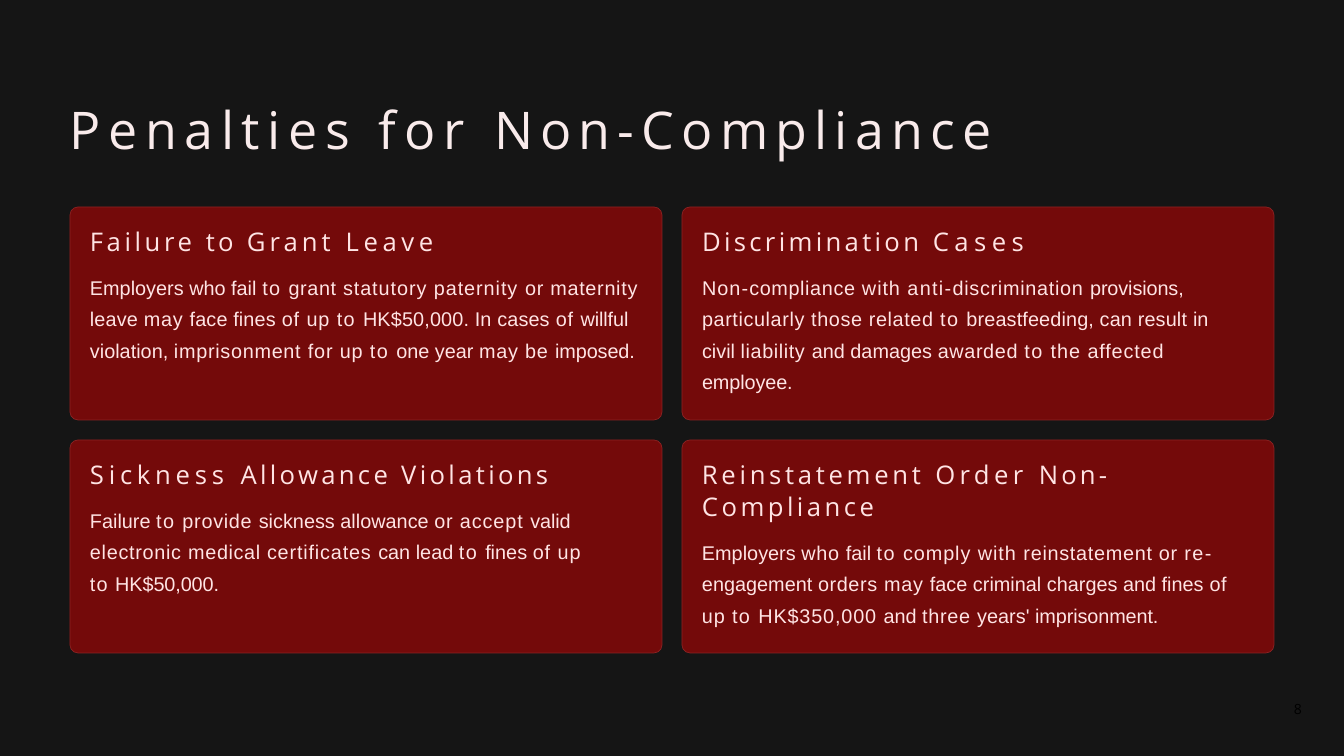
"""Build the slide on penalties for non-compliance: a title above four cards."""
from pptx import Presentation
from pptx.dml.color import RGBColor
from pptx.enum.shapes import MSO_SHAPE
from pptx.enum.text import PP_ALIGN
from pptx.util import Pt

TITLE = [("Penalties ", 6.5), ("for ", 6.8), ("Non-", 6), ("Compliance", 6.2)]
PAGE_NUMBER = [("8", 0)]

CARDS = [
    {
        "text_size": (552, 139),
        "headings": [[("Failure ", 3.1), ("to ", 2.8), ("Grant ", 3.5), ("Leave", 4)]],
        "body": [
            ("Employers who fail ", 0), ("to ", 1.2), ("grant ", 0.5),
            ("statutory paternity ", 0.8), ("or maternity ", 0.6), ("leave ", 0.1),
            ("may ", 0.6), ("face fines ", 0.1), ("of ", 0.8), ("up ", 0.7), ("to ", 1.2),
            ("HK$50,000. In cases ", 0.1), ("of ", 0.8), ("willful ", -0.1),
            ("violation, ", 0), ("imprisonment ", 0.6), ("for up ", 0.7), ("to ", 1.2),
            ("one year ", 0), ("may ", 0.6), ("be ", 0.7), ("imposed.", -0.1),
        ],
    },
    {
        "text_size": (511, 171),
        "headings": [[("Discrimination ", 2.9), ("Cases", 4.7)]],
        "body": [
            ("Non-", 0.9), ("compliance ", 0.5), ("with ", 0.8), ("anti-", 1.1),
            ("discrimination ", 0.6), ("provisions, ", -0.1),
            ("particularly those related ", 0.5), ("to ", 1.2),
            ("breastfeeding, can result ", 0.1), ("in ", -0.2), ("civil ", 0),
            ("liability ", 0.5), ("and damages ", 0), ("awarded ", 0.5), ("to ", 1.2),
            ("the ", 0.8), ("affected ", 0.7), ("employee.", -0.1),
        ],
    },
    {
        "text_size": (516, 139),
        "headings": [[("Sickness ", 4.1), ("Allowance Violations", 2.9)]],
        "body": [
            ("Failure ", 0), ("to ", 1.2), ("provide ", 0.6), ("sickness allowance ", 0),
            ("or ", 0.6), ("accept ", 0.8), ("valid ", -0.1), ("electronic ", 0.6),
            ("medical ", 0.5), ("certificates ", 0.7), ("can lead ", 0), ("to ", 1.2),
            ("fines ", 0), ("of ", 0.8), ("up ", 0.7), ("to ", 0.9), ("HK$50,000.", -0.1),
        ],
    },
    {
        "text_size": (540, 174),
        "headings": [
            [("Reinstatement ", 3.2), ("Order ", 3.8), ("Non-", 2.7)],
            [("Compliance", 3)],
        ],
        "body": [
            ("Employers ", 0), ("who ", 0.5), ("fail ", 0), ("to ", 1.2),
            ("comply with ", 0.8), ("reinstatement or ", 0.6), ("re- ", 1.2),
            ("engagement ", 0), ("orders ", 0.5), ("may ", 0.6),
            ("face criminal charges and fines ", 0), ("of ", 0.5), ("up ", 0.7),
            ("to ", 1.2), ("HK$350,000 ", 0.7), ("and ", 0), ("three ", 0.6),
            ("years' ", 0), ("imprisonment.", -0.1),
        ],
    },
]

BACKGROUND = RGBColor(0x15, 0x15, 0x15)
CARD_FILL = RGBColor(0x74, 0x0A, 0x0A)
CARD_LINE = RGBColor(0x8D, 0x23, 0x23)
TITLE_COLOR = RGBColor(0xF9, 0xEB, 0xEB)
TEXT_COLOR = RGBColor(0xFF, 0xE4, 0xE4)
NUMBER_COLOR = RGBColor(0x00, 0x00, 0x00)

TITLE_FONT = {"name": "Open Sans", "size": Pt(44.5), "color": TITLE_COLOR}
HEADING_FONT = {"name": "Open Sans", "size": Pt(22), "color": TEXT_COLOR}
BODY_FONT = {"name": "Arial", "size": Pt(17), "color": TEXT_COLOR}
NUMBER_FONT = {"name": "Open Sans", "size": Pt(12), "color": NUMBER_COLOR}

PX = 914400 // 84
CARD_LEFT, CARD_TOP = 70, 207
CARD_WIDTH, CARD_HEIGHT = 592, 213
GAP = 20
RADIUS = 8
TEXT_INSET_X, TEXT_INSET_Y = 20, 19


def px(*lengths):
    """Turn pixel lengths into EMU."""
    return [length * PX for length in lengths]


def add_text(slide, box, paragraphs):
    """Add a text box whose paragraphs are (runs, font, paragraph format)."""
    frame = slide.shapes.add_textbox(*px(*box)).text_frame
    frame.word_wrap = True
    for side in ("left", "top", "right", "bottom"):
        setattr(frame, f"margin_{side}", 0)
    for index, (runs, font, layout) in enumerate(paragraphs):
        paragraph = frame.add_paragraph() if index else frame.paragraphs[0]
        for name, value in layout.items():
            setattr(paragraph, name, value)
        for text, spacing in runs:
            run = paragraph.add_run()
            run.text = text
            run.font.name, run.font.size = font["name"], font["size"]
            run.font.color.rgb = font["color"]
            run.font._element.set("spc", str(round(spacing * 100)))


def add_card(slide, index, card):
    """Add one card of the two-column grid with its text."""
    row, column = divmod(index, 2)
    left = CARD_LEFT + column * (CARD_WIDTH + GAP)
    top = CARD_TOP + row * (CARD_HEIGHT + GAP)
    shape = slide.shapes.add_shape(
        MSO_SHAPE.ROUNDED_RECTANGLE, *px(left, top, CARD_WIDTH, CARD_HEIGHT))
    shape.adjustments[0] = RADIUS / CARD_HEIGHT
    shape.shadow.inherit = False
    shape.fill.solid()
    shape.fill.fore_color.rgb = CARD_FILL
    shape.line.color.rgb = CARD_LINE
    shape.line.width = Pt(0.6)

    paragraphs = [(runs, HEADING_FONT, {"space_before": Pt(1)}) for runs in card["headings"]]
    paragraphs.append((card["body"], BODY_FONT, {"space_before": Pt(9.6), "line_spacing": 1.32}))
    box = (left + TEXT_INSET_X, top + TEXT_INSET_Y, *card["text_size"])
    add_text(slide, box, paragraphs)


def main():
    """Build and save the presentation."""
    presentation = Presentation()
    presentation.slide_width, presentation.slide_height = px(1344, 756)
    slide = presentation.slides.add_slide(presentation.slide_layouts[6])
    slide.background.fill.solid()
    slide.background.fill.fore_color.rgb = BACKGROUND

    add_text(slide, (70, 98, 922, 64), [(TITLE, TITLE_FONT, {"space_before": Pt(1.1)})])
    for index, card in enumerate(CARDS):
        add_card(slide, index, card)
    add_text(slide, (1242, 701, 60, 20), [(PAGE_NUMBER, NUMBER_FONT, {"alignment": PP_ALIGN.RIGHT})])
    presentation.save("out.pptx")


if __name__ == "__main__":
    main()
